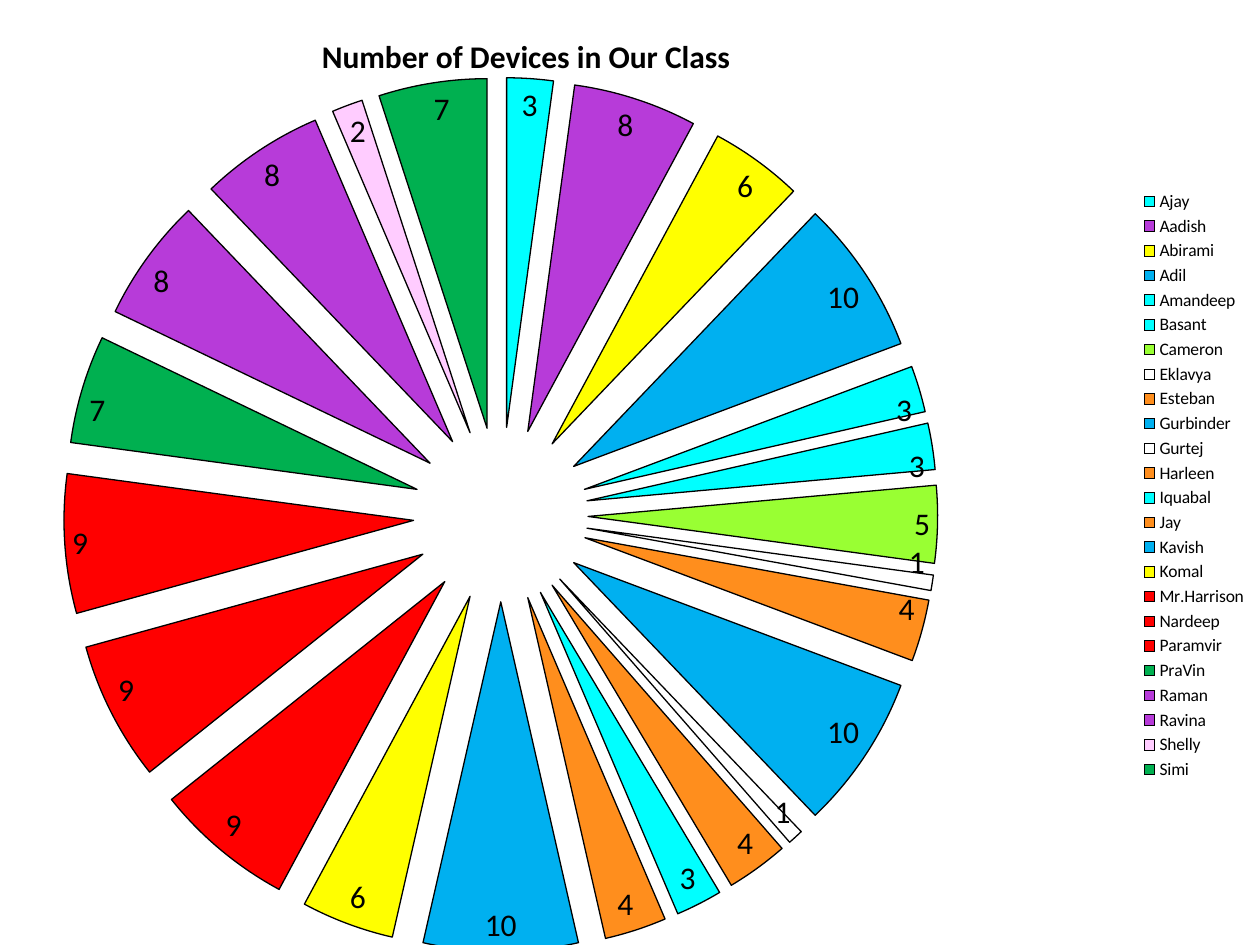
"""Build a slide with an exploded pie chart of devices per class member."""
from typing import NamedTuple

from lxml.etree import SubElement
from pptx import Presentation
from pptx.chart.chart import Chart
from pptx.chart.data import CategoryChartData
from pptx.chart.series import PieSeries
from pptx.dml.color import RGBColor
from pptx.enum.chart import XL_CHART_TYPE as ChartType
from pptx.enum.chart import XL_LABEL_POSITION as LabelPosition
from pptx.enum.chart import XL_LEGEND_POSITION as LegendPosition
from pptx.oxml.ns import qn
from pptx.util import Emu, Pt

EMU_PER_PX = 914400 / 126
BLANK_LAYOUT = 6
FONT = "Calibri"
EXPLOSION = 25
COLOURS = {
    "text": "000000",
    "outline": "000000",
    "white": "FFFFFF",
    "pink": "FFCCFF",
    "cyan": "00FFFF",
    "orange": "FF8E1D",
    "lime": "99FF33",
    "yellow": "FFFF00",
    "green": "00B050",
    "purple": "B73BD9",
    "red": "FF0000",
    "blue": "00B0F0",
}
COLOUR_BY_COUNT = {
    1: "white", 2: "pink", 3: "cyan", 4: "orange", 5: "lime",
    6: "yellow", 7: "green", 8: "purple", 9: "red", 10: "blue",
}


class Owner(NamedTuple):
    name: str
    devices: int


OWNERS = [
    Owner("Ajay", 3), Owner("Aadish", 8), Owner("Abirami", 6), Owner("Adil", 10),
    Owner("Amandeep", 3), Owner("Basant", 3), Owner("Cameron", 5), Owner("Eklavya", 1),
    Owner("Esteban", 4), Owner("Gurbinder", 10), Owner("Gurtej", 1), Owner("Harleen", 4),
    Owner("Iquabal", 3), Owner("Jay", 4), Owner("Kavish", 10), Owner("Komal", 6),
    Owner("Mr.Harrison", 9), Owner("Nardeep", 9), Owner("Paramvir", 9), Owner("PraVin", 7),
    Owner("Raman", 8), Owner("Ravina", 8), Owner("Shelly", 2), Owner("Simi", 7),
]


def px(length: int) -> Emu:
    return Emu(round(length * EMU_PER_PX))


def colour(name: str) -> RGBColor:
    return RGBColor.from_string(COLOURS[name])


def set_layout(element, index: int, **settings) -> None:
    for layout in element.findall(qn("c:layout")):
        element.remove(layout)
    layout = SubElement(element, qn("c:layout"))
    manual = SubElement(layout, qn("c:manualLayout"))
    for tag, value in settings.items():
        SubElement(manual, qn(f"c:{tag}")).set("val", str(value))
    element.insert(index, layout)


def style_font(font, size: int, bold: bool = False) -> None:
    font.name = FONT
    font.size = Pt(size)
    font.bold = bold
    font.color.rgb = colour("text")


def style_slices(series: PieSeries) -> None:
    for index, owner in enumerate(OWNERS):
        slice_format = series.points[index].format
        slice_format.fill.solid()
        slice_format.fill.fore_color.rgb = colour(COLOUR_BY_COUNT[owner.devices])
        slice_format.line.color.rgb = colour("outline")
        slice_format.line.width = Pt(0.75)
    series.format.line.color.rgb = colour("outline")
    series.format.line.width = Pt(0.75)
    explosion = SubElement(series._element, qn("c:explosion"))
    explosion.set("val", str(EXPLOSION))
    series._element.find(qn("c:spPr")).addnext(explosion)


def style_labels(series: PieSeries) -> None:
    labels = series.data_labels
    labels.show_value = True
    labels.position = LabelPosition.INSIDE_END
    style_font(labels.font, 18)


def add_title(chart: Chart) -> None:
    chart.has_title = True
    title = chart.chart_title
    title.text_frame.text = "Number of Devices in Our Class"
    style_font(title.text_frame.paragraphs[0].runs[0].font, 18, bold=True)
    set_layout(title._element, 1, xMode="edge", yMode="edge", x=0.31, y=0.03)


def add_legend(chart: Chart) -> None:
    chart.has_legend = True
    chart.legend.position = LegendPosition.RIGHT
    chart.legend.include_in_layout = False
    style_font(chart.legend.font, 10)


def add_device_chart(slide) -> None:
    data = CategoryChartData()
    data.categories = [owner.name for owner in OWNERS]
    data.add_series("Series 1", [owner.devices for owner in OWNERS])
    frame = slide.shapes.add_chart(
        ChartType.PIE, px(-108), px(0), px(1368), px(971), data
    )
    chart = frame.chart
    style_font(chart.font, 10)
    plot = chart.plots[0]
    plot.vary_by_categories = True
    style_slices(plot.series[0])
    style_labels(plot.series[0])
    add_title(chart)
    add_legend(chart)
    set_layout(
        plot._element.getparent(), 0, layoutTarget="inner",
        xMode="edge", yMode="edge", x=0.02, y=0.08, w=0.85, h=0.9,
    )


def main() -> None:
    presentation = Presentation()
    presentation.slide_width = px(1260)
    presentation.slide_height = px(945)
    slide = presentation.slides.add_slide(presentation.slide_layouts[BLANK_LAYOUT])
    add_device_chart(slide)
    presentation.save("out.pptx")


if __name__ == "__main__":
    main()
